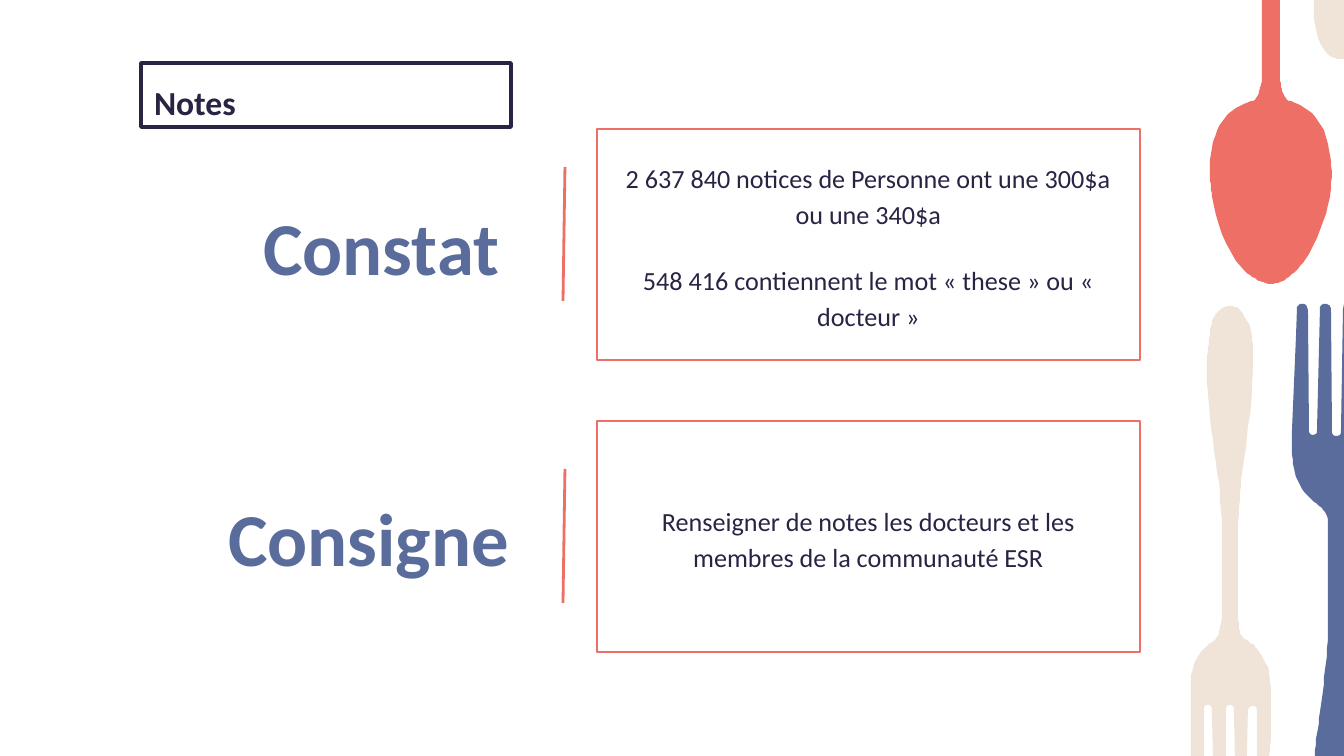
from lxml import etree
from pptx import Presentation
from pptx.dml.color import RGBColor
from pptx.enum.shapes import MSO_CONNECTOR, MSO_SHAPE
from pptx.enum.text import MSO_ANCHOR, PP_ALIGN
from pptx.oxml.ns import qn
from pptx.util import Emu, Pt

RECTANGLE = MSO_SHAPE.RECTANGLE
STRAIGHT = MSO_CONNECTOR.STRAIGHT
TOP, MIDDLE = MSO_ANCHOR.TOP, MSO_ANCHOR.MIDDLE
LEFT, CENTER, RIGHT = PP_ALIGN.LEFT, PP_ALIGN.CENTER, PP_ALIGN.RIGHT

SLIDE_W, SLIDE_H = 1344, 756
SCALE = 9144000 / SLIDE_W
INSET = 13
CURVE_STEPS = 8
CORAL, SAND, BLUE, INK, WHITE = "ED6F65", "EFE4D7", "596C9C", "292344", "FFFFFF"

# Outlines in slide px: two numbers draw a line, six draw a cubic curve.
SPOON = [
    (1280, 0), (1280, 75), (1280, 81, 1281, 86, 1282, 91),
    (1284, 97, 1286, 101, 1293, 102), (1313, 109, 1324, 124, 1328, 144),
    (1332, 159, 1332, 173, 1331, 188), (1328, 211, 1321, 234, 1309, 254),
    (1304, 262, 1298, 270, 1289, 277), (1284, 281, 1277, 284, 1271, 284),
    (1267, 284, 1263, 282, 1259, 281), (1253, 278, 1247, 273, 1243, 269),
    (1224, 247, 1216, 222, 1212, 196), (1211, 188, 1210, 179, 1210, 173),
    (1210, 155, 1212, 140, 1219, 126), (1226, 114, 1236, 106, 1249, 102),
    (1255, 101, 1258, 97, 1259, 91), (1261, 86, 1262, 82, 1262, 77), (1262, 0),
]
HANDLE_END = [
    (1314, 0), (1314, 13, 1314, 26, 1318, 38), (1320, 43, 1322, 47, 1325, 51),
    (1329, 56, 1335, 59, 1339, 59), (1344, 59), (1344, 0),
]
SAND_FORK = [
    (1230, 306), (1225, 306, 1220, 309, 1216, 314),
    (1212, 320, 1210, 328, 1210, 335), (1208, 347, 1207, 358, 1207, 370),
    (1207, 401, 1212, 431, 1216, 462), (1220, 488, 1222, 513, 1222, 540),
    (1222, 616), (1222, 621, 1220, 628, 1219, 633),
    (1219, 637, 1216, 638, 1214, 641), (1200, 649, 1195, 660, 1191, 675),
    (1191, 756), (1204, 756), (1204, 710), (1204, 703, 1212, 703, 1212, 710),
    (1213, 756), (1226, 756), (1226, 711), (1226, 703, 1234, 703, 1234, 710),
    (1235, 756), (1247, 756), (1248, 710), (1249, 704, 1257, 704, 1257, 711),
    (1257, 756), (1269, 756), (1271, 743, 1271, 727, 1271, 711),
    (1271, 700, 1271, 689, 1270, 679), (1269, 668, 1265, 659, 1257, 649),
    (1255, 646, 1253, 644, 1249, 642), (1242, 638, 1239, 633, 1239, 626),
    (1238, 618, 1238, 610, 1238, 603), (1238, 560),
    (1238, 540, 1238, 520, 1240, 500), (1240, 482, 1243, 465, 1246, 448),
    (1249, 419, 1253, 391, 1253, 362), (1253, 349, 1253, 339, 1250, 327),
    (1249, 323, 1246, 319, 1243, 314), (1241, 309, 1235, 306, 1230, 306),
]
BLUE_FORK = [
    (1326, 304), (1322, 304, 1321, 305, 1320, 308), (1317, 431),
    (1317, 437, 1309, 437, 1309, 430), (1308, 310),
    (1307, 302, 1297, 302, 1297, 309), (1296, 337), (1292, 430),
    (1292, 441, 1292, 452, 1293, 464), (1294, 476, 1300, 487, 1308, 496),
    (1310, 499, 1313, 502, 1317, 504), (1324, 508, 1327, 515, 1328, 521),
    (1328, 593), (1328, 613, 1328, 635, 1327, 656),
    (1325, 675, 1322, 694, 1320, 712), (1318, 727, 1316, 741, 1315, 756),
    (1344, 756), (1344, 304), (1343, 309), (1341, 430),
    (1341, 438, 1332, 438, 1332, 431), (1331, 310),
    (1331, 307, 1329, 304, 1326, 304),
]


def px(length):
    return Emu(round(length * SCALE))


def color(hex_value):
    return RGBColor.from_string(hex_value)


def flatten(outline):
    """Turn lines and cubic curves into a list of points."""
    points = [outline[0]]
    for segment in outline[1:]:
        if len(segment) == 2:
            points.append(segment)
            continue
        x0, y0 = points[-1]
        x1, y1, x2, y2, x3, y3 = segment
        for step in range(1, CURVE_STEPS + 1):
            t = step / CURVE_STEPS
            a, b, c, d = (1 - t) ** 3, 3 * t * (1 - t) ** 2, 3 * t * t * (1 - t), t ** 3
            points.append((a * x0 + b * x1 + c * x2 + d * x3,
                           a * y0 + b * y1 + c * y2 + d * y3))
    return points


def draw_cutlery(slide):
    pieces = [(SPOON, CORAL), (HANDLE_END, SAND), (SAND_FORK, SAND), (BLUE_FORK, BLUE)]
    for outline, fill in pieces:
        start, *rest = flatten(outline)
        builder = slide.shapes.build_freeform(*start, scale=SCALE)
        builder.add_line_segments(rest)
        piece = builder.convert_to_shape()
        piece.shadow.inherit = False
        piece.fill.solid()
        piece.fill.fore_color.rgb = color(fill)
        piece.line.fill.background()


def write(shape, lines, size, ink, align, anchor=MIDDLE, bold=False, spaced=False):
    frame = shape.text_frame
    frame.word_wrap = True
    frame.vertical_anchor = anchor
    frame.margin_left = frame.margin_right = px(INSET)
    frame.margin_top = frame.margin_bottom = px(INSET)
    frame.text = "\n".join(lines)
    for paragraph in frame.paragraphs:
        paragraph.alignment = align
        paragraph.line_spacing = 1.15 if spaced else 1.0
        paragraph.space_before = Pt(0)
        paragraph.space_after = Pt(16 if spaced else 0)
        font = paragraph.font
        font.name, font.size, font.bold = "Calibri", Pt(size), bold
        font.color.rgb = color(ink)


def add_frame(slide, box, line, weight, fill=None):
    frame = slide.shapes.add_shape(RECTANGLE, *map(px, box))
    frame.shadow.inherit = False
    if fill:
        frame.fill.solid()
        frame.fill.fore_color.rgb = color(fill)
    else:
        frame.fill.background()
    frame.line.color.rgb = color(line)
    frame.line.width = Pt(weight)
    return frame


def add_section(slide, heading, heading_box, title, rule_top, details, box):
    """Place a heading, a slanted rule and a framed text; box frames the text."""
    left = box[0]
    label = title or slide.shapes.add_textbox(0, 0, 0, 0)
    label.left, label.top, label.width, label.height = map(px, heading_box)
    write(label, [heading], 40, BLUE, RIGHT, bold=True)

    rule = slide.shapes.add_connector(
        STRAIGHT, px(left - 34), px(rule_top + 134), px(left - 32), px(rule_top))
    rule.line.color.rgb = color(CORAL)
    rule.line.width = Pt(1.5)
    etree.SubElement(rule._element.spPr, qn("a:effectLst"))

    frame = add_frame(slide, box, CORAL, 0.75)
    write(frame, details, 14, INK, CENTER, spaced=True)


def add_topic(slide, topic, box):
    frame = add_frame(slide, box, INK, 2, fill=WHITE)
    write(frame, [topic], 18, INK, LEFT, anchor=TOP, bold=True, spaced=True)


def main():
    presentation = Presentation()
    presentation.slide_width, presentation.slide_height = px(SLIDE_W), px(SLIDE_H)
    slide = presentation.slides.add_slide(presentation.slide_layouts[5])
    draw_cutlery(slide)
    add_section(
        slide, "Constat", (138, 195, 374, 101), slide.shapes.title, 167,
        ["2 637 840 notices de Personne ont une 300$a ou une 340$a",
         "548 416 contiennent le mot « these » ou « docteur »"],
        (597, 129, 543, 231))
    add_section(
        slide, "Consigne", (138, 495, 384, 83), None, 469,
        ["Renseigner de notes les docteurs et les membres de la communauté ESR"],
        (597, 421, 543, 231))
    add_topic(slide, "Notes", (141, 63, 370, 64))
    presentation.save("out.pptx")


if __name__ == "__main__":
    main()
